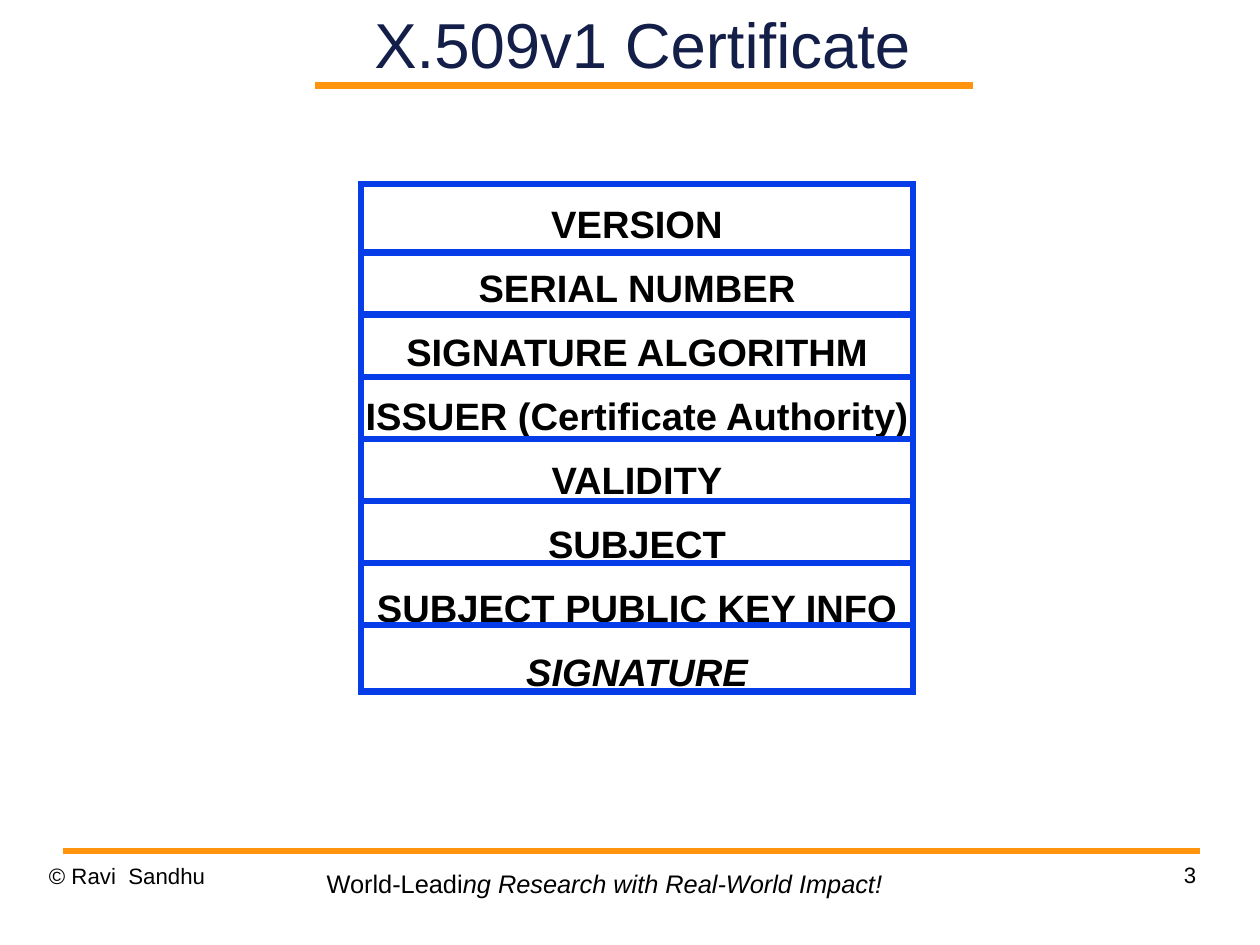
from dataclasses import dataclass, field
from typing import Any

import lxml.etree
import pptx
import pptx.dml.color
import pptx.enum.shapes
import pptx.enum.text
import pptx.oxml.ns
import pptx.util

Pt = pptx.util.Pt
Align = pptx.enum.text.PP_ALIGN
Anchor = pptx.enum.text.MSO_ANCHOR

BLACK = pptx.dml.color.RGBColor(0x00, 0x00, 0x00)
NAVY = pptx.dml.color.RGBColor(0x13, 0x1F, 0x49)
ORANGE = pptx.dml.color.RGBColor(0xFF, 0x95, 0x0E)
BLUE = pptx.dml.color.RGBColor(0x06, 0x3D, 0xE8)

FIELD_LINE_WIDTH = 4
FIELD_LINE_TOP = 159
FIELD_LINE_STEP = 39.15

CERTIFICATE_FIELDS = [
    "VERSION",
    "SERIAL NUMBER",
    "SIGNATURE ALGORITHM",
    "ISSUER (Certificate Authority)",
    "VALIDITY",
    "SUBJECT",
    "SUBJECT PUBLIC KEY INFO",
    "SIGNATURE",
]


@dataclass(frozen=True)
class Run:
    text: str
    italic: bool = False


@dataclass(frozen=True)
class Label:
    left: float
    top: float
    width: float
    height: float
    runs: list[Run]
    size: float
    color: pptx.dml.color.RGBColor = BLACK
    paragraph_format: dict[str, Any] = field(default_factory=dict)
    frame_format: dict[str, Any] = field(default_factory=dict)


@dataclass(frozen=True)
class Rule:
    left: float
    right: float
    y: float
    color: pptx.dml.color.RGBColor
    width: float


NO_MARGINS = {
    "margin_left": 0,
    "margin_top": 0,
    "margin_right": 0,
    "margin_bottom": 0,
    "word_wrap": True,
}

LABELS = [
    Label(30.8, 543.3, 185.04, 41.04, [Run("© Ravi  Sandhu")], 14,
          paragraph_format={"line_spacing": 1.01}, frame_format=NO_MARGINS),
    Label(568.5, 542.16, 185.04, 41.04, [Run("3")], 14,
          paragraph_format={"line_spacing": 1.01, "alignment": Align.RIGHT},
          frame_format=NO_MARGINS),
    Label(198.72, 543.6, 365.76, 26.64,
          [Run("World-Leadi"), Run("ng Research with Real-World Impact!", True)], 16,
          frame_format={"word_wrap": False,
                        "auto_size": pptx.enum.text.MSO_AUTO_SIZE.SHAPE_TO_FIT_TEXT}),
    Label(173.2, 0, 462.96, 54, [Run("X.509v1 Certificate")], 40, NAVY,
          {"alignment": Align.CENTER},
          NO_MARGINS | {"vertical_anchor": Anchor.MIDDLE}),
]

PAGE_RULES = [
    Rule(198.72, 612.72, 54, ORANGE, 4.31),
    Rule(39.4, 755.8, 536.1, ORANGE, 4.31),
]

FIELD_RULES = [
    Rule(229.6, 573, FIELD_LINE_TOP + index * FIELD_LINE_STEP, BLUE, FIELD_LINE_WIDTH)
    for index in range(len(CERTIFICATE_FIELDS) - 1)
]


def apply_format(target: Any, values: dict[str, Any]) -> None:
    for name, value in values.items():
        setattr(target, name, value)


def add_run(paragraph: Any, run: Run, size: float,
            color: pptx.dml.color.RGBColor, bold: bool = False) -> None:
    text_run = paragraph.add_run()
    text_run.text = run.text
    apply_format(text_run.font, {"name": "Arial", "size": Pt(size),
                                 "bold": bold, "italic": run.italic})
    text_run.font.color.rgb = color


def draw_rule(shapes: Any, rule: Rule) -> None:
    connector = shapes.add_connector(
        pptx.enum.shapes.MSO_CONNECTOR.STRAIGHT,
        Pt(rule.left), Pt(rule.y), Pt(rule.right), Pt(rule.y))
    connector.line.color.rgb = rule.color
    connector.line.width = Pt(rule.width)
    lxml.etree.SubElement(connector._element.spPr, pptx.oxml.ns.qn("a:effectLst"))


def draw_label(shapes: Any, label: Label) -> None:
    text_box = shapes.add_textbox(
        Pt(label.left), Pt(label.top), Pt(label.width), Pt(label.height))
    apply_format(text_box.text_frame, label.frame_format)
    paragraph = text_box.text_frame.paragraphs[0]
    apply_format(paragraph, label.paragraph_format)
    for run in label.runs:
        add_run(paragraph, run, label.size, label.color)


def draw_certificate(shapes: Any) -> None:
    certificate = shapes.add_shape(
        pptx.enum.shapes.MSO_SHAPE.RECTANGLE,
        Pt(227.5), Pt(115.9), Pt(347.5), Pt(319.7))
    certificate.shadow.inherit = False
    certificate.fill.background()
    certificate.line.color.rgb = BLUE
    certificate.line.width = Pt(FIELD_LINE_WIDTH)
    outline = certificate._element.spPr.find(pptx.oxml.ns.qn("a:ln"))
    lxml.etree.SubElement(outline, pptx.oxml.ns.qn("a:miter"), lim="800000")
    frame = certificate.text_frame
    apply_format(frame, {"word_wrap": False, "vertical_anchor": Anchor.MIDDLE})
    for index, name in enumerate(CERTIFICATE_FIELDS):
        paragraph = frame.add_paragraph() if index else frame.paragraphs[0]
        apply_format(paragraph, {"alignment": Align.CENTER, "line_spacing": 1.4})
        add_run(paragraph, Run(name, name == "SIGNATURE"), 24, BLACK, bold=True)
    field_lines = shapes.add_group_shape()
    for rule in FIELD_RULES:
        draw_rule(field_lines.shapes, rule)


def main() -> None:
    presentation = pptx.Presentation()
    presentation.slide_width = Pt(793.7)
    presentation.slide_height = Pt(595.28)
    slide = presentation.slides.add_slide(presentation.slide_layouts[6])
    for rule in PAGE_RULES:
        draw_rule(slide.shapes, rule)
    for label in LABELS:
        draw_label(slide.shapes, label)
    draw_certificate(slide.shapes)
    presentation.save("out.pptx")


if __name__ == "__main__":
    main()
